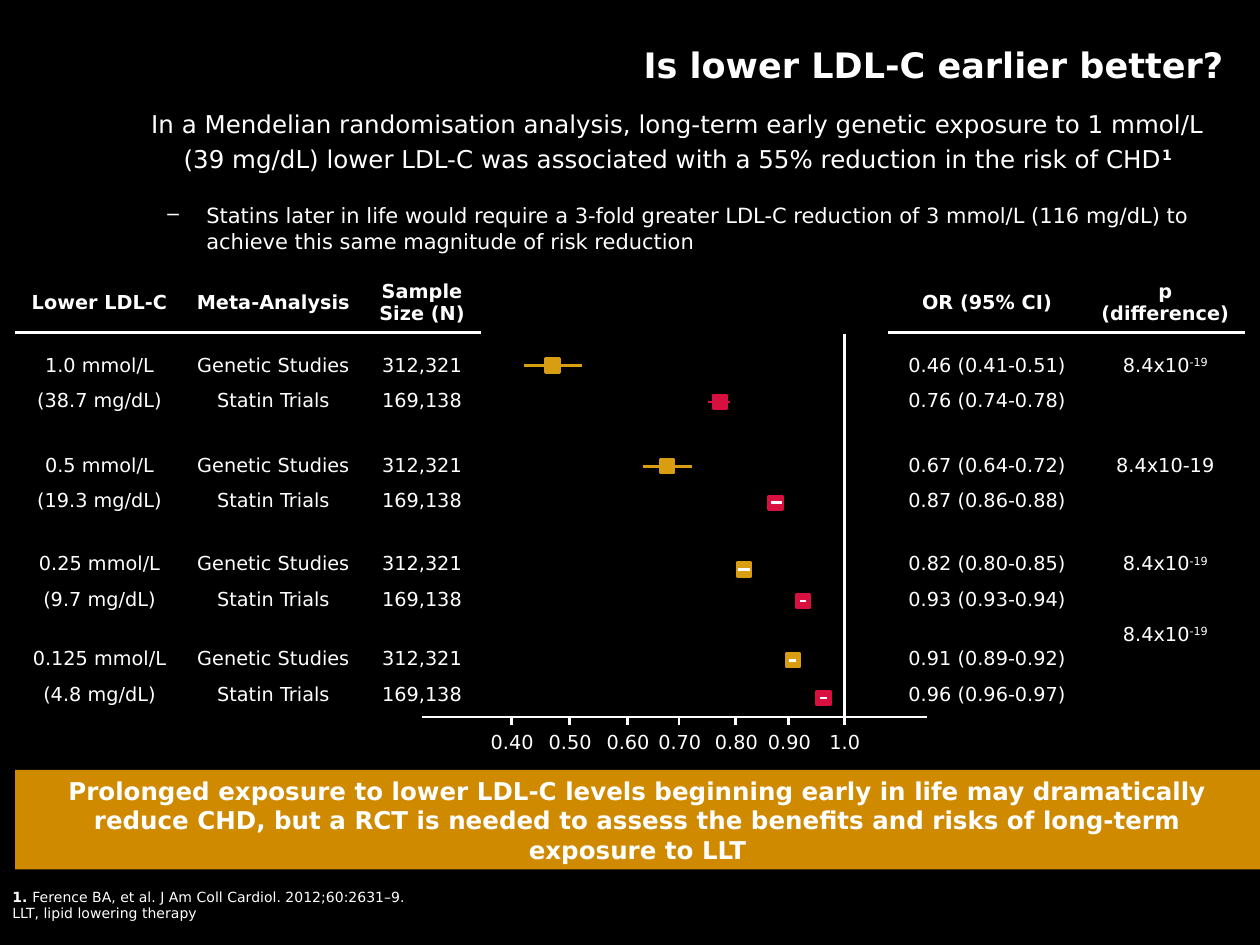
from lxml import etree
from pptx import Presentation
from pptx.dml.color import RGBColor
from pptx.enum.shapes import MSO_CONNECTOR, MSO_SHAPE
from pptx.enum.text import MSO_ANCHOR, PP_ALIGN
from pptx.oxml.ns import qn
from pptx.util import Inches, Pt

BLACK = RGBColor(0x00, 0x00, 0x00)
WHITE = RGBColor(0xFF, 0xFF, 0xFF)
GOLD = RGBColor(0xD8, 0x9D, 0x10)
RED = RGBColor(0xD8, 0x10, 0x3F)
BANNER = RGBColor(0xCF, 0x8A, 0x00)
FONT = "DejaVu Sans"
NO_TABLE_STYLE = "{2D5ABB26-0587-4C30-8999-92F81FD0307C}"

TITLE = "Is lower LDL-C earlier better?"
FINDING = [
    "In a Mendelian randomisation analysis, long-term early genetic exposure to 1 mmol/L",
    "(39 mg/dL) lower LDL-C was associated with a 55% reduction in the risk of CHD",
]
STATINS = ("Statins later in life would require a 3-fold greater LDL-C reduction of "
           "3 mmol/L (116 mg/dL) to achieve this same magnitude of risk reduction")
CONCLUSION = ("Prolonged exposure to lower LDL-C levels beginning early in life may "
              "dramatically reduce CHD, but a RCT is needed to assess the beneﬁts and "
              "risks of long-term exposure to LLT")
CITATION = "Ference BA, et al. J Am Coll Cardiol. 2012;60:2631–9."
ABBREVIATION = "LLT, lipid lowering therapy"

HEADERS = ["Lower LDL-C", "Meta-Analysis", "Sample Size (N)", "", "OR (95% CI)", "p (difference)"]
STUDIES = [("Genetic Studies", "312,321"), ("Statin Trials", "169,138")]
DOSES = [
    (("1.0 mmol/L", "(38.7 mg/dL)"), ("0.46 (0.41-0.51)", "0.76 (0.74-0.78)"), ("8.4x10", "-19")),
    (("0.5 mmol/L", "(19.3 mg/dL)"), ("0.67 (0.64-0.72)", "0.87 (0.86-0.88)"), ("8.4x10-19", "")),
    (("0.25 mmol/L", "(9.7 mg/dL)"), ("0.82 (0.80-0.85)", "0.93 (0.93-0.94)"), ("8.4x10", "-19")),
    (("0.125 mmol/L", "(4.8 mg/dL)"), ("0.91 (0.89-0.92)", "0.96 (0.96-0.97)"), ("8.4x10", "-19")),
]
COLUMN_WIDTHS = [1.34, 1.42, 0.94, 3.23, 1.57, 1.26]
ROW_HEIGHTS = [0.47, 0.4, 0.28, 0.51, 0.28, 0.5, 0.28, 0.47, 0.28]

MARKER_SIZE = 0.11
ESTIMATES = [
    (4.33, 2.9, 4.16, 4.62, GOLD, GOLD),
    (5.66, 3.19, 5.62, 5.79, RED, RED),
    (5.24, 3.7, 5.1, 5.49, GOLD, GOLD),
    (6.1, 3.99, 6.12, 6.21, RED, WHITE),
    (5.85, 4.52, 5.86, 5.95, GOLD, WHITE),
    (6.32, 4.77, 6.35, 6.4, RED, WHITE),
    (6.24, 5.24, 6.26, 6.32, GOLD, WHITE),
    (6.48, 5.54, 6.51, 6.56, RED, WHITE),
]
AXIS_TOP = 5.69
TICK_BOTTOM = 5.75
TICKS = [("0.40", 4.06), ("0.50", 4.52), ("0.60", 4.98), ("0.70", 5.39),
         ("0.80", 5.84), ("0.90", 6.26), ("1.0", 6.7)]


def style(paragraph, size, bold=False, align=PP_ALIGN.LEFT):
    paragraph.alignment = align
    font = paragraph.font
    font.name, font.size, font.bold = FONT, Pt(size), bold
    font.color.rgb = WHITE


def add_superscript(paragraph, text):
    run = paragraph.add_run()
    run.text = text
    run._r.get_or_add_rPr().set("baseline", "30000")
    return run


def add_text_box(slide, left, top, width, height, wrap=True):
    frame = slide.shapes.add_textbox(*map(Inches, (left, top, width, height))).text_frame
    frame.word_wrap = wrap
    return frame


def add_rectangle(slide, left, top, width, height, color, outlined=True):
    shape = slide.shapes.add_shape(MSO_SHAPE.RECTANGLE, *map(Inches, (left, top, width, height)))
    shape.shadow.inherit = False
    shape.fill.solid()
    shape.fill.fore_color.rgb = color
    if outlined:
        shape.line.color.rgb = color
        shape.line.width = Pt(1.5)
    else:
        shape.line.fill.background()
    return shape


def add_line(slide, x1, y1, x2, y2, color=WHITE):
    line = slide.shapes.add_connector(MSO_CONNECTOR.STRAIGHT, *map(Inches, (x1, y1, x2, y2)))
    line.line.color.rgb = color
    line.line.width = Pt(1.5)
    etree.SubElement(line._element.spPr, qn("a:effectLst"))


def add_bottom_border(cell):
    properties = cell._tc.get_or_add_tcPr()
    border = etree.Element(qn("a:lnB"), w=str(Pt(2.25)))
    fill = etree.SubElement(border, qn("a:solidFill"))
    etree.SubElement(fill, qn("a:srgbClr"), val=str(WHITE))
    properties.insert(0, border)


def add_heading(slide):
    frame = add_text_box(slide, 1.54, -0.11, 8.27, 1.25)
    frame.vertical_anchor = MSO_ANCHOR.MIDDLE
    frame.text = TITLE
    style(frame.paragraphs[0], 20, True, PP_ALIGN.RIGHT)

    frame = add_text_box(slide, 0.73, 0.82, 9.3, 2.03)
    frame.text = "\n".join(FINDING + [STATINS])
    first, second, detail = frame.paragraphs
    add_superscript(second, "1").font.bold = True
    second.space_before = Pt(2.8)
    detail.space_before = Pt(17)
    properties = detail._p.get_or_add_pPr()
    properties.set("marL", str(Inches(0.81)))
    properties.set("indent", str(Inches(-0.31)))
    etree.SubElement(properties, qn("a:buChar"), char="–")
    style(first, 14, align=PP_ALIGN.CENTER)
    style(second, 14, align=PP_ALIGN.CENTER)
    style(detail, 12)


def add_results(slide):
    rows = [[(header, "") for header in HEADERS]]
    for amounts, ratios, p_value in DOSES:
        for amount, (study, sample), ratio, p in zip(amounts, STUDIES, ratios, (p_value, ("", ""))):
            rows.append([(amount, ""), (study, ""), (sample, ""), ("", ""), (ratio, ""), p])

    table = slide.shapes.add_table(
        len(rows), len(HEADERS), Inches(0.12), Inches(2.17),
        Inches(sum(COLUMN_WIDTHS)), Inches(sum(ROW_HEIGHTS))).table
    table.first_row = table.horz_banding = False
    table._tbl.tblPr.find(qn("a:tableStyleId")).text = NO_TABLE_STYLE
    for column, width in zip(table.columns, COLUMN_WIDTHS):
        column.width = Inches(width)
    for r, values in enumerate(rows):
        table.rows[r].height = Inches(ROW_HEIGHTS[r])
        for c, (text, superscript) in enumerate(values):
            cell = table.cell(r, c)
            cell.fill.background()
            cell.margin_left = cell.margin_right = Inches(0.08)
            cell.vertical_anchor = MSO_ANCHOR.BOTTOM if r else MSO_ANCHOR.MIDDLE
            paragraph = cell.text_frame.paragraphs[0]
            style(paragraph, 11, r == 0, PP_ALIGN.CENTER)
            if text:
                paragraph.add_run().text = text
            else:
                etree.SubElement(paragraph._p, qn("a:endParaRPr"), sz="1100")
            if superscript:
                add_superscript(paragraph, superscript)
            if r == 0 and text:
                add_bottom_border(cell)
    table.cell(len(rows) - 2, len(HEADERS) - 1).vertical_anchor = MSO_ANCHOR.TOP


def add_forest_plot(slide):
    add_line(slide, 3.35, AXIS_TOP, 7.36, AXIS_TOP)
    add_line(slide, TICKS[-1][1], 2.65, TICKS[-1][1], TICK_BOTTOM)
    for left, middle, low, high, color, line_color in ESTIMATES:
        add_rectangle(slide, left, middle - MARKER_SIZE / 2, MARKER_SIZE, MARKER_SIZE, color)
        add_line(slide, low, middle, high, middle, line_color)
    for label, x in TICKS:
        if label != "1.0":
            add_line(slide, x, AXIS_TOP, x, TICK_BOTTOM)
        frame = add_text_box(slide, x - 0.27, TICK_BOTTOM, 0.55, 0.29, wrap=False)
        frame.text = label
        style(frame.paragraphs[0], 11, align=PP_ALIGN.CENTER)


def add_conclusion(slide):
    frame = add_rectangle(slide, 0.12, 6.11, 9.88, 0.79, BANNER, outlined=False).text_frame
    frame.word_wrap = True
    frame.vertical_anchor = MSO_ANCHOR.TOP
    frame.text = CONCLUSION
    style(frame.paragraphs[0], 14, True, PP_ALIGN.CENTER)

    frame = add_text_box(slide, 0, 7, 6.69, 0.37)
    source = frame.paragraphs[0]
    number = source.add_run()
    number.text = "1. "
    number.font.bold = True
    source.add_run().text = CITATION
    frame.add_paragraph().text = ABBREVIATION
    for paragraph in frame.paragraphs:
        style(paragraph, 8)


def main():
    presentation = Presentation()
    presentation.slide_width, presentation.slide_height = Inches(10), Inches(7.5)
    slide = presentation.slides.add_slide(presentation.slide_layouts[6])
    slide.background.fill.solid()
    slide.background.fill.fore_color.rgb = BLACK
    add_heading(slide)
    add_results(slide)
    add_forest_plot(slide)
    add_conclusion(slide)
    presentation.save("out.pptx")


if __name__ == "__main__":
    main()
